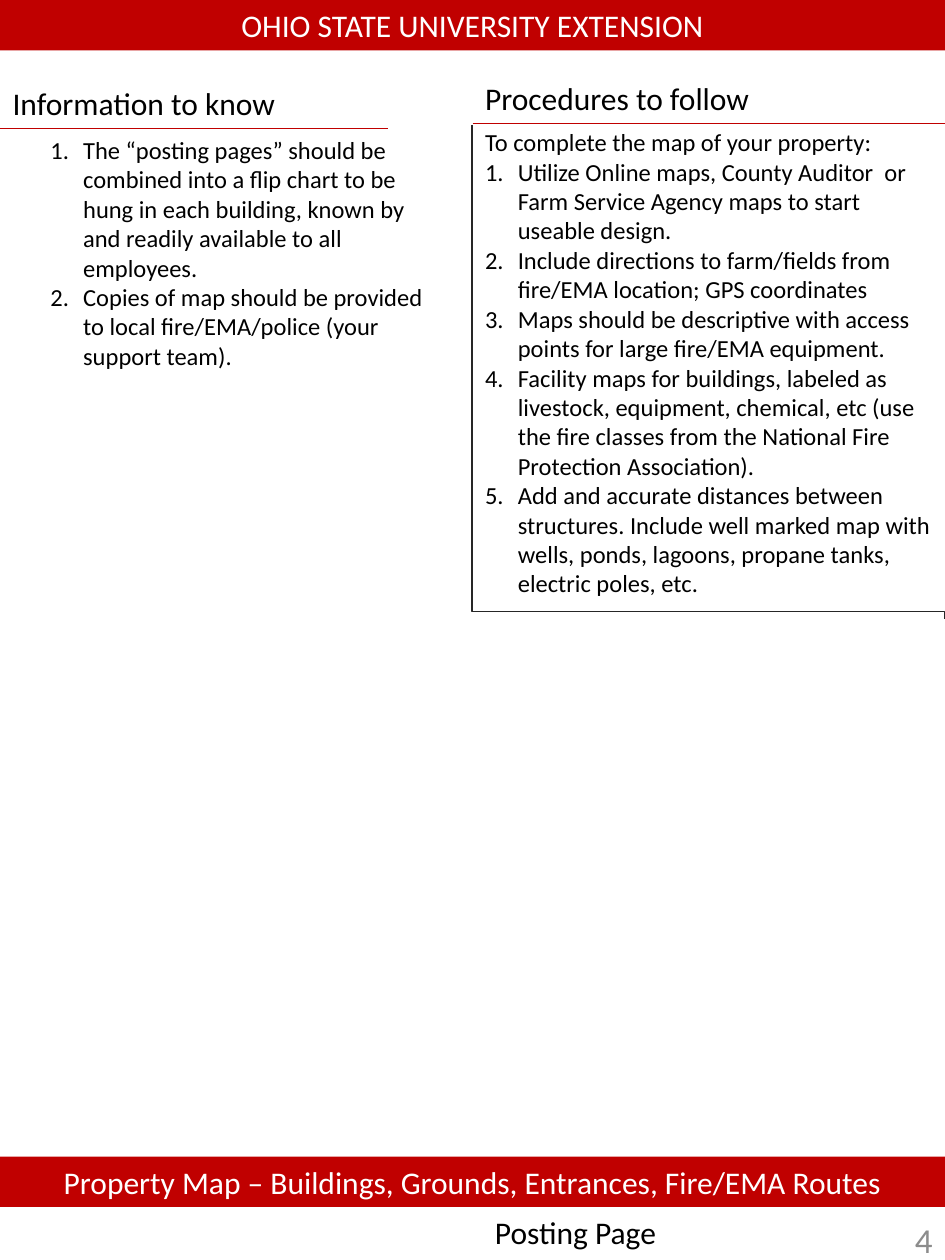
from pptx import Presentation
from pptx.dml.color import RGBColor
from pptx.enum.shapes import MSO_CONNECTOR, MSO_SHAPE
from pptx.enum.text import MSO_ANCHOR, MSO_AUTO_SIZE, PP_ALIGN
from pptx.oxml.ns import qn
from pptx.util import Inches, Pt
from lxml.etree import SubElement

RED = RGBColor(0xC0, 0, 0)
WHITE = RGBColor(0xFF, 0xFF, 0xFF)
BLACK = RGBColor(0, 0, 0)
DARK = RGBColor(0x26, 0x26, 0x26)
GRAY = RGBColor(0x8C, 0x8C, 0x8C)

KNOW = [
    "The “posting pages” should be combined into a flip chart to be hung in each building, known by and readily available to all employees.",
    "Copies of map should be provided to local fire/EMA/police (your support team).",
]
INTRO = "To complete the map of your property:"
STEPS = [
    "Utilize Online maps, County Auditor  or Farm Service Agency maps to start useable design.",
    "Include directions to farm/fields from fire/EMA location; GPS coordinates",
    "Maps should be descriptive with access points for large fire/EMA equipment.",
    "Facility maps for buildings, labeled as livestock, equipment, chemical, etc (use the fire classes from the National Fire Protection Association).",
    "Add and accurate distances between structures. Include well marked map with wells, ponds, lagoons, propane tanks, electric poles, etc.",
]


def place(shape, box):
    """Move and size a shape to a box in inches."""
    shape.left, shape.top, shape.width, shape.height = map(Inches, box)


def style(para, size, color, align=PP_ALIGN.LEFT):
    """Format one paragraph."""
    para.alignment = align
    para.space_before = Pt(0)
    font = para.font
    font.name, font.size, font.bold = "Calibri", Pt(size), False
    font.color.rgb = color


def write(shape, text, size=18, color=BLACK, align=PP_ALIGN.LEFT, anchor=MSO_ANCHOR.TOP):
    """Put one styled line of text in a shape."""
    frame = shape.text_frame
    frame.word_wrap = True
    frame.auto_size = MSO_AUTO_SIZE.NONE
    frame.vertical_anchor = anchor
    frame.text = text
    style(frame.paragraphs[0], size, color, align)


def add_bar(shape, box, text):
    """Turn a shape into a red band with a centred line."""
    place(shape, box)
    shape.fill.solid()
    shape.fill.fore_color.rgb = RED
    shape.line.fill.background()
    write(shape, text, color=WHITE, align=PP_ALIGN.CENTER, anchor=MSO_ANCHOR.MIDDLE)


def add_head(shape, box, text):
    """Fill a heading placeholder."""
    place(shape, box)
    write(shape, text)


def add_list(shape, box, items, intro=None):
    """Fill a body placeholder with a numbered list."""
    place(shape, box)
    frame = shape.text_frame
    frame.auto_size = MSO_AUTO_SIZE.NONE
    lines = ([intro] if intro else []) + items
    frame.text = "\n".join(lines)
    for para, line in zip(frame.paragraphs, lines):
        props = para._p.get_or_add_pPr()
        dent = 0 if line == intro else Inches(0.26)
        props.set("marL", str(dent))
        props.set("indent", str(-dent))
        if dent:
            SubElement(props, qn("a:buFont"), typeface="+mj-lt")
            SubElement(props, qn("a:buAutoNum"), type="arabicPeriod")
        else:
            SubElement(props, qn("a:buNone"))
        style(para, 14, BLACK)


def add_line(slide, kind, ends, color):
    """Draw a thin connector without a shadow."""
    line = slide.shapes.add_connector(kind, *map(Inches, ends))
    line.line.color.rgb = color
    line.line.width = Pt(0.75)
    SubElement(line._element.spPr, qn("a:effectLst"))
    return line


def add_bend(slide):
    """Draw the elbow line around the procedures."""
    bend = add_line(slide, MSO_CONNECTOR.ELBOW, (7.58, 1.08, 3.66, 4.83), DARK)
    props = bend._element.spPr
    props.find(qn("a:xfrm")).set("rot", "16200000")
    guides = props.find(qn("a:prstGeom")).find(qn("a:avLst"))
    SubElement(guides, qn("a:gd"), name="adj1", fmla="val 98500")


def add_note(slide, box, text, **look):
    """Add a plain text box."""
    write(slide.shapes.add_textbox(*map(Inches, box)), text, **look)


def main():
    """Build the posting page."""
    deck = Presentation()
    deck.slide_width, deck.slide_height = Inches(7.5), Inches(10)
    slide = deck.slides.add_slide(deck.slide_layouts.get_by_name("Comparison"))
    title, left, know, right, steps = slide.placeholders
    add_bar(title, (0, 0, 7.5, 0.4), "OHIO STATE UNIVERSITY EXTENSION")
    add_head(left, (0, 0.62, 2.48, 0.4), "Information to know")
    add_list(know, (0.3, 1.02, 3.2, 1.99), KNOW)
    add_head(right, (3.75, 0.58, 3.33, 0.4), "Procedures to follow")
    add_list(steps, (3.75, 0.96, 3.75, 3.87), STEPS, INTRO)
    for ends in ((3.75, 0.98, 7.5, 0.98), (0, 1.02, 3.08, 1.02)):
        add_line(slide, MSO_CONNECTOR.STRAIGHT, ends, RED)
    add_bend(slide)
    foot = slide.shapes.add_shape(MSO_SHAPE.RECTANGLE, 0, 0, 0, 0)
    foot.shadow.inherit = False
    add_bar(foot, (0, 9.18, 7.5, 0.4),
            "Property Map – Buildings, Grounds, Entrances, Fire/EMA Routes")
    add_note(slide, (3.83, 9.58, 3.67, 0.4), "Posting Page")
    add_note(slide, (5.75, 9.67, 1.75, 0.33), "4", size=20, color=GRAY,
             align=PP_ALIGN.RIGHT, anchor=MSO_ANCHOR.MIDDLE)
    deck.save("out.pptx")


if __name__ == "__main__":
    main()
